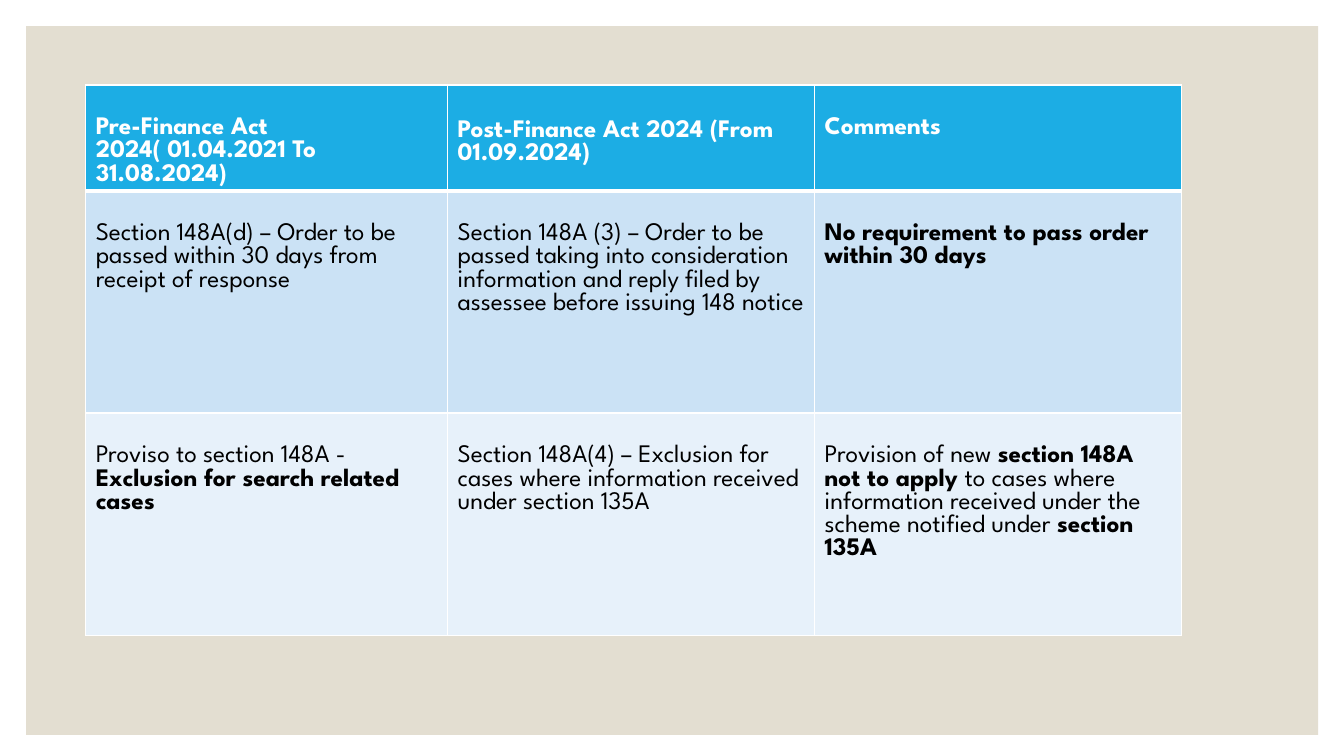
from dataclasses import dataclass

from lxml.etree import SubElement
from pptx import Presentation
from pptx.dml.color import RGBColor
from pptx.enum.shapes import MSO_SHAPE
from pptx.oxml.ns import qn
from pptx.util import Cm, Pt


@dataclass(frozen=True)
class Theme:
    font: str = "League Spartan"
    size: float = 18
    panel: str = "E3DED1"
    head: str = "1CADE4"
    bands: tuple = ("CBE2F5", "E7F1FA")
    white: str = "FFFFFF"
    ink: str = "000000"
    thin: float = 0.96
    thick: float = 3


# Each cell is a list of (text, bold) runs.
HEAD = [
    [("Pre-Finance Act 2024( 01.04.2021 To 31.08.2024)", True)],
    [("Post-Finance Act 2024 (From 01.09.2024)", True)],
    [("Comments", True)],
]
BODY = [
    [
        [("Section 148A(d) – Order to be passed within 30 days from receipt of response", False)],
        [("Section 148A (3) – Order to be passed taking into consideration information "
          "and reply filed by assessee before issuing 148 notice", False)],
        [("No requirement to pass order within 30 days", True)],
    ],
    [
        [("Proviso to section 148A - ", False), ("Exclusion for search related cases", True)],
        [("Section 148A(4) – Exclusion for cases where information received "
          "under section 135A", False)],
        [("Provision of new ", False), ("section 148A not to apply ", True),
         ("to cases where information received under the scheme notified under ", False),
         ("section 135A", True)],
    ],
]
WIDTHS = (9.12, 9.25, 9.25)
HEIGHTS = (2.67, 5.6, 5.6)
TOP_PAD = 0.81
POST_PAD = 0.87  # the middle heading sits slightly lower


class Deck:
    def __init__(self, theme):
        self.theme = theme
        self.show = Presentation()
        self.show.slide_width, self.show.slide_height = Cm(33.87), Cm(19.05)
        self.slide = self.show.slides.add_slide(self.show.slide_layouts[6])

    def panel(self, left, top, width, height):
        box = self.slide.shapes.add_shape(
            MSO_SHAPE.RECTANGLE, Cm(left), Cm(top), Cm(width), Cm(height))
        box.shadow.inherit = False
        box.fill.solid()
        box.fill.fore_color.rgb = RGBColor.from_string(self.theme.panel)
        box.line.fill.background()

    def table(self, left, top, rows):
        grid = self.slide.shapes.add_table(
            len(rows), len(WIDTHS), Cm(left), Cm(top),
            Cm(sum(WIDTHS)), Cm(sum(HEIGHTS))).table
        grid.horz_banding = False
        for col, width in zip(grid.columns, WIDTHS):
            col.width = Cm(width)
        for row, height in zip(grid.rows, HEIGHTS):
            row.height = Cm(height)
        for r, row in enumerate(rows):
            for c, runs in enumerate(row):
                self.cell(grid.cell(r, c), runs, r, c)

    def cell(self, cell, runs, row, col):
        theme = self.theme
        cell.margin_top = Cm(POST_PAD if (row, col) == (0, 1) else TOP_PAD)
        cell.margin_bottom = Cm(0.1)
        self.edges(cell, row)
        cell.fill.solid()
        cell.fill.fore_color.rgb = RGBColor.from_string(
            theme.bands[row - 1] if row else theme.head)
        para = cell.text_frame.paragraphs[0]
        para.font.name = theme.font
        para.font.size = Pt(theme.size)
        para.font.color.rgb = RGBColor.from_string(theme.ink if row else theme.white)
        for text, bold in runs:
            run = para.add_run()
            run.text = text
            run.font.bold = bold

    def edges(self, cell, row):
        """Draw white borders, thick between the heading and the body."""
        theme = self.theme
        props = cell._tc.get_or_add_tcPr()
        for side in "LRTB":
            heavy = (row, side) in ((0, "B"), (1, "T"))
            width = Pt(theme.thick if heavy else theme.thin)
            line = SubElement(props, qn(f"a:ln{side}"), w=str(width))
            fill = SubElement(line, qn("a:solidFill"))
            SubElement(fill, qn("a:srgbClr"), val=theme.white)


def main():
    deck = Deck(Theme())
    deck.panel(0.66, 0.66, 32.56, 17.86)
    deck.table(2.16, 2.14, [HEAD, *BODY])
    deck.show.save("out.pptx")


if __name__ == "__main__":
    main()
